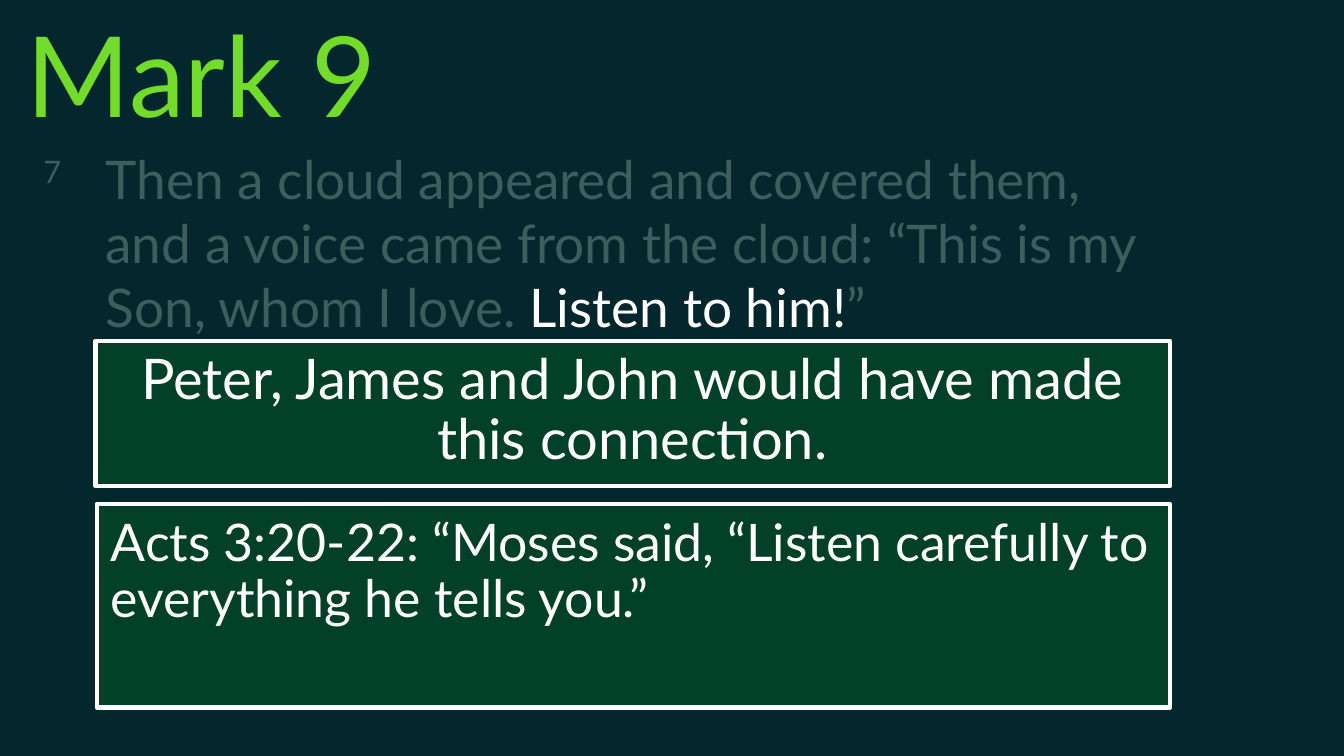
from dataclasses import dataclass

import pptx
import pptx.dml.color
import pptx.enum.shapes
import pptx.enum.text
import pptx.shapes.autoshape
import pptx.slide
import pptx.util

Cm = pptx.util.Cm
Pt = pptx.util.Pt
RGBColor = pptx.dml.color.RGBColor
Align = pptx.enum.text.PP_ALIGN

NIGHT = RGBColor(0x03, 0x27, 0x2D)
LIME = RGBColor(0x72, 0xDB, 0x2B)
MUTED = RGBColor(0x3D, 0x5E, 0x5D)
GREEN = RGBColor(0x03, 0x40, 0x29)
WHITE = RGBColor(0xFF, 0xFF, 0xFF)

FRAME = {
    "word_wrap": True,
    "auto_size": pptx.enum.text.MSO_AUTO_SIZE.NONE,
    "vertical_anchor": pptx.enum.text.MSO_ANCHOR.TOP,
    "margin_left": Cm(0.25),
    "margin_right": Cm(0.25),
    "margin_top": Cm(0.13),
    "margin_bottom": Cm(0.13),
}

Box = tuple[float, float, float, float]


@dataclass(frozen=True)
class Run:
    text: str
    size: int
    color: RGBColor
    raised: bool = False


@dataclass(frozen=True)
class Panel:
    box: Box
    inner: Box
    run: Run
    align: Align


VERSE = [
    Run("7", 38, MUTED, raised=True),
    Run(
        " \tThen a cloud appeared and covered them, and a voice came "
        "from the cloud: “This is my Son, whom I love. ",
        38,
        MUTED,
    ),
    Run("Listen to him!", 38, WHITE),
    Run("”", 38, MUTED),
]

PANELS = [
    Panel(
        (2.41, 8.59, 27.08, 3.66),
        (2.41, 8.71, 27.05, 3.33),
        Run("Peter, James and John would have made this connection.", 40, WHITE),
        Align.CENTER,
    ),
    Panel(
        (2.44, 12.7, 27.05, 5.13),
        (2.54, 12.9, 26.92, 3.1),
        Run(
            "Acts 3:20-22: “Moses said, “Listen carefully to everything he tells you.”",
            37,
            WHITE,
        ),
        Align.LEFT,
    ),
]


def place(shape: pptx.shapes.autoshape.Shape, box: Box) -> None:
    for name, value in zip(("left", "top", "width", "height"), box):
        setattr(shape, name, Cm(value))


def write(
    shape: pptx.shapes.autoshape.Shape,
    runs: list[Run],
    align: Align = Align.LEFT,
    pitch: float = 1.0,
) -> None:
    frame = shape.text_frame
    for name, value in FRAME.items():
        setattr(frame, name, value)
    para = frame.paragraphs[0]
    style = {"alignment": align, "line_spacing": pitch, "space_before": Pt(0)}
    for name, value in style.items():
        setattr(para, name, value)
    for item in runs:
        run = para.add_run()
        run.text = item.text
        for name, value in {"name": "Lato", "size": Pt(item.size)}.items():
            setattr(run.font, name, value)
        run.font.color.rgb = item.color
        if item.raised:
            run.font._element.set("baseline", "30000")


def hang(shape: pptx.shapes.autoshape.Shape, depth: int) -> None:
    props = shape.text_frame.paragraphs[0]._p.get_or_add_pPr()
    for name, value in {"marL": depth, "indent": -depth}.items():
        props.set(name, str(value))
    props.append(pptx.oxml.parse_xml(
        '<a:buNone xmlns:a="http://schemas.openxmlformats.org/drawingml/2006/main"/>'
    ))


def draw(slide: pptx.slide.Slide, panel: Panel) -> None:
    card = slide.shapes.add_shape(
        pptx.enum.shapes.MSO_SHAPE.RECTANGLE, *map(Cm, panel.box)
    )
    card.shadow.inherit = False
    card.fill.solid()
    card.fill.fore_color.rgb = GREEN
    card.line.color.rgb = WHITE
    card.line.width = Pt(3)
    label = slide.shapes.add_textbox(*map(Cm, panel.inner))
    write(label, [panel.run], panel.align, 0.9)


def main() -> None:
    deck = pptx.Presentation()
    deck.slide_width = Cm(33.87)
    deck.slide_height = Cm(19.05)
    slide = deck.slides.add_slide(deck.slide_layouts[1])
    slide.background.fill.solid()
    slide.background.fill.fore_color.rgb = NIGHT

    title = slide.shapes.title
    place(title, (0.43, 0, 25.4, 3.68))
    write(title, [Run("Mark 9", 80, LIME)])

    body = slide.placeholders[1]
    place(body, (0.84, 3.56, 29.01, 5.13))
    write(body, VERSE)
    hang(body, Cm(1.57))

    for panel in PANELS:
        draw(slide, panel)
    deck.save("out.pptx")


if __name__ == "__main__":
    main()
